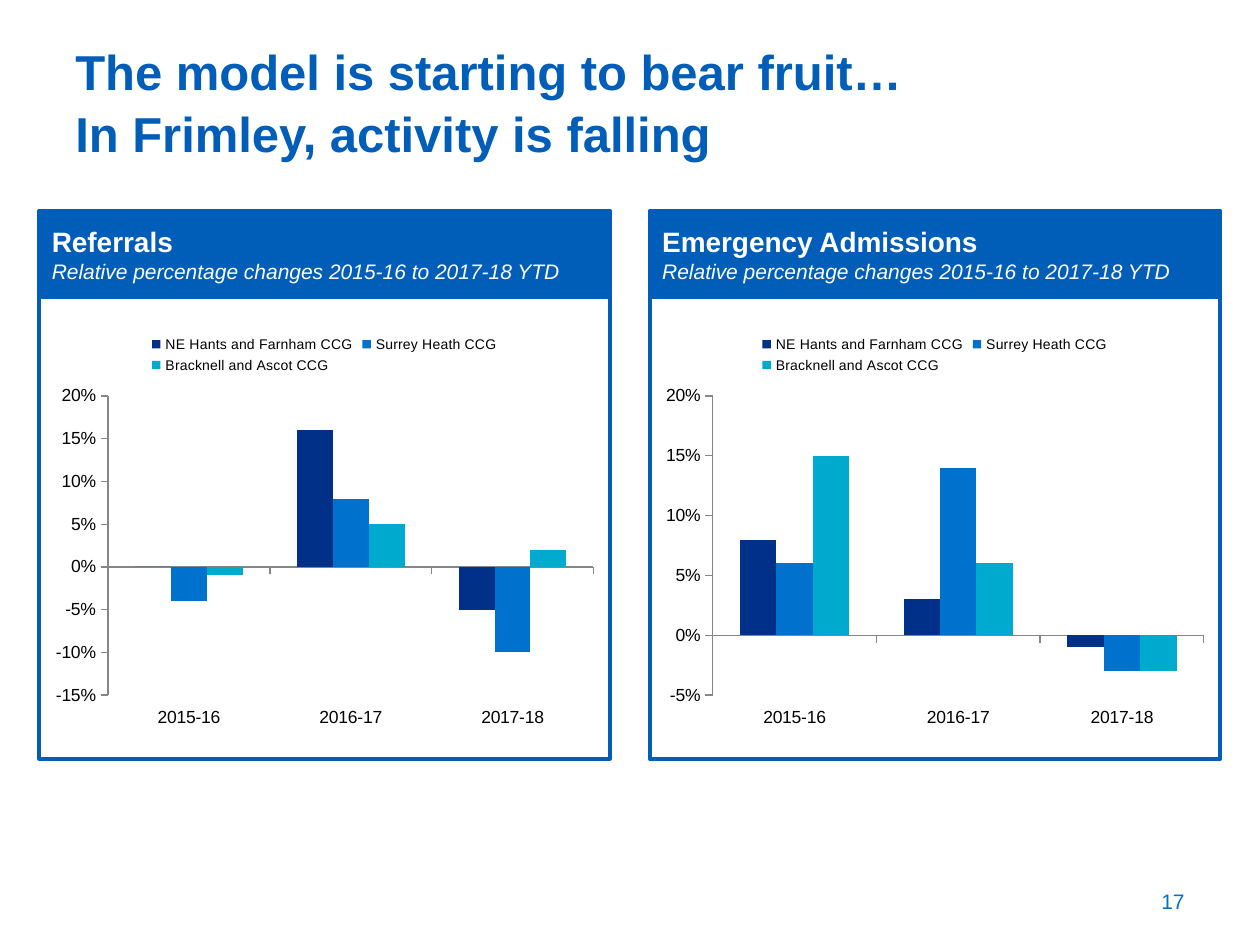
from pptx import Presentation
from pptx.chart.data import CategoryChartData as Data
from pptx.dml.color import RGBColor as RGB
from pptx.enum.chart import XL_CHART_TYPE as Kind, XL_LEGEND_POSITION as Side
from pptx.enum.chart import XL_TICK_LABEL_POSITION as Label, XL_TICK_MARK as Tick
from pptx.enum.shapes import MSO_SHAPE as Form
from pptx.enum.text import MSO_ANCHOR as Anchor, PP_ALIGN as Align
from pptx.util import Pt

HUES = {"blue": "005EB8", "page": "0072C6", "white": "FFFFFF",
        "black": "000000", "axis": "868686"}
YEARS = ["2015-16", "2016-17", "2017-18"]
GROUPS = {"NE Hants and Farnham CCG": "003087",
          "Surrey Heath CCG": "0072CE",
          "Bracknell and Ascot CCG": "00A9CE"}
SPAN = "Relative percentage changes 2015-16 to 2017-18 YTD"
PANELS = [
    ("Referrals", -0.15,
     [(0, 0.16, -0.05), (-0.04, 0.08, -0.1), (-0.01, 0.05, 0.02)]),
    ("Emergency Admissions", -0.05,
     [(0.08, 0.03, -0.01), (0.06, 0.14, -0.03), (0.15, 0.06, -0.03)]),
]


def style(font, size, hue, bold=False, italic=False):
    """Set the face, size and colour of a font."""
    font.name, font.size = "Arial", Pt(size)
    font.bold, font.italic = bold, italic
    font.color.rgb = RGB.from_string(HUES[hue])


def write(shape, text, first=True, align=Align.LEFT, space=None, **form):
    """Write one paragraph into a shape, centred in height."""
    frame = shape.text_frame
    frame.word_wrap = True
    frame.vertical_anchor = Anchor.MIDDLE
    para = frame.paragraphs[0] if first else frame.add_paragraph()
    para.text = text
    para.alignment = align
    if space:
        para.line_spacing = space
    for run in para.runs:
        style(run.font, **form)


def add_text(slide, box, text, **form):
    """Add a text box."""
    write(slide.shapes.add_textbox(*map(Pt, box)), text, **form)


def add_rect(group, box, fill=None):
    """Add a rectangle with a blue edge."""
    rect = group.shapes.add_shape(Form.RECTANGLE, *map(Pt, box))
    rect.shadow.inherit = False
    if fill:
        rect.fill.solid()
        rect.fill.fore_color.rgb = RGB.from_string(HUES[fill])
    else:
        rect.fill.background()
    rect.line.color.rgb = RGB.from_string(HUES["blue"])
    rect.line.width = Pt(2.25)
    return rect


def add_bars(group, box, low, rows):
    """Add a clustered column chart of percentage changes."""
    data = Data(number_format="0%")
    data.categories = YEARS
    for name, row in zip(GROUPS, rows):
        data.add_series(name, row)
    chart = group.shapes.add_chart(
        Kind.COLUMN_CLUSTERED, *map(Pt, box), data).chart
    style(chart.font, 10, "black")
    chart.has_title = False
    chart.has_legend = True
    chart.legend.position = Side.TOP
    chart.legend.include_in_layout = False
    style(chart.legend.font, 8, "black")
    plot = chart.plots[0]
    plot.gap_width, plot.overlap = 150, 0
    plot.vary_by_categories = False
    for bars, hue in zip(plot.series, GROUPS.values()):
        bars.invert_if_negative = False
        bars.format.fill.solid()
        bars.format.fill.fore_color.rgb = RGB.from_string(hue)
    for axis in (chart.category_axis, chart.value_axis):
        axis.has_major_gridlines = False
        axis.major_tick_mark = Tick.OUTSIDE
        axis.minor_tick_mark = Tick.NONE
        axis.format.line.color.rgb = RGB.from_string(HUES["axis"])
        axis.format.line.width = Pt(0.75)
    chart.category_axis.tick_label_position = Label.LOW
    scale = chart.value_axis
    scale.minimum_scale, scale.maximum_scale = low, 0.2
    scale.major_unit = 0.05
    scale.tick_labels.number_format = "0%"
    scale.tick_labels.number_format_is_linked = False


def add_panel(slide, box, title, low, rows):
    """Add a framed chart under a title band."""
    left, top, width, height = box
    group = slide.shapes.add_group_shape()
    add_bars(group, (left + 3, top + 63.3, width - 6, 236.2), low, rows)
    add_rect(group, box)
    band = add_rect(group, (left, top, width, 49), "blue")
    write(band, title, size=16, hue="white", bold=True)
    write(band, SPAN, first=False, size=12, hue="white", italic=True)


def main():
    """Build the slide and save it."""
    deck = Presentation()
    deck.slide_width, deck.slide_height = Pt(720), Pt(540)
    slide = deck.slides.add_slide(deck.slide_layouts[6])
    add_text(slide, (36, 31, 581, 52.5),
             "The model is starting to bear fruit…\vIn Frimley, activity is falling",
             size=28, hue="blue", bold=True, space=1.05)
    add_text(slide, (516, 500.5, 168, 28.8), "17",
             align=Align.RIGHT, size=12, hue="page")
    for spot, panel in enumerate(PANELS):
        add_panel(slide, (22.5 + spot * 348.8, 120.8, 326, 312.8), *panel)
    deck.save("out.pptx")


if __name__ == "__main__":
    main()
